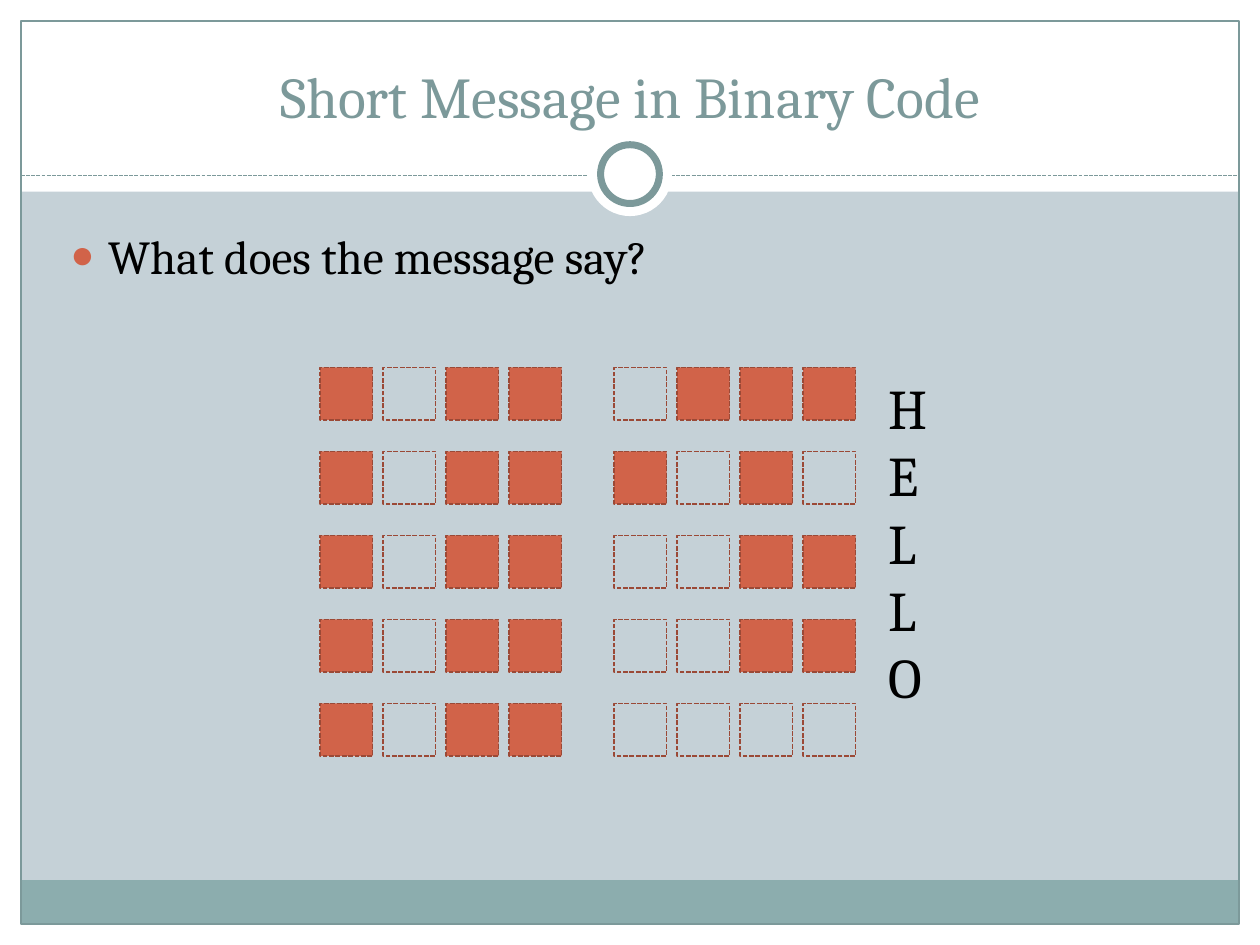
"""Build a slide that spells a short message in rows of binary squares."""
from lxml import etree
from pptx import Presentation
from pptx.dml.color import RGBColor
from pptx.enum import dml, shapes, text
from pptx.oxml import ns
from pptx.util import Pt

WHITE, SLATE, TEAL = "FFFFFF", "7C999A", "8CADAE"
ORANGE, RUST, BLACK = "D16349", "9B4936", "000000"
RECT, OVAL = shapes.MSO_SHAPE.RECTANGLE, shapes.MSO_SHAPE.OVAL


def colour(target, value):
    if hasattr(target, "solid"):
        target.solid()
        target = target.fore_color
    target.rgb = RGBColor.from_string(value)


def add_box(parent, kind, bounds, fill=None, line=None, width=0.75):
    box = parent.add_shape(kind, *map(Pt, bounds))
    box.shadow.inherit = False
    if fill:
        colour(box.fill, fill)
    else:
        box.fill.background()
    if line:
        colour(box.line.fill, line)
        box.line.width = Pt(width)
    else:
        box.line.fill.background()
    return box


deck = Presentation()
deck.slide_width, deck.slide_height = Pt(720), Pt(540)
page = deck.slides.add_slide(deck.slide_layouts[1])
colour(page.background.fill, "C5D1D7")

for bounds in [(0, 528, 720, 12), (0, 0, 720, 109.5), (0, 0, 12, 540), (708, 0, 12, 540)]:
    add_box(page.shapes, RECT, bounds, WHITE)
add_box(page.shapes, RECT, (12, 503, 696, 25), TEAL)
add_box(page.shapes, RECT, (12, 12, 696, 516), line=SLATE)

divider = page.shapes.add_connector(shapes.MSO_CONNECTOR.STRAIGHT, Pt(12), Pt(100.5), Pt(708), Pt(100.5))
colour(divider.line.fill, SLATE)
divider.line.width = Pt(0.75)
divider.line.dash_style = dml.MSO_LINE.SQUARE_DOT
etree.SubElement(divider.element.spPr, ns.qn("a:effectLst"))

add_box(page.shapes, OVAL, (336, 75.5, 48, 48), WHITE)
add_box(page.shapes, OVAL, (343.2, 82.7, 33.6, 33.6), WHITE, SLATE, 4)

title, body = page.shapes.title, page.placeholders[1]
letters = page.shapes.add_textbox(Pt(500.5), Pt(210), Pt(57.6), Pt(222))
labels = [
    (title, (24, 18, 672, 60), "Short Message in Binary Code", 33, SLATE),
    (body, (33, 126, 648, 60), "What does the message say?", 27, BLACK),
    (letters, (500.5, 210, 57.6, 222), "HELLO", 32, BLACK),
]
for box, bounds, words, size, shade in labels:
    box.left, box.top, box.width, box.height = map(Pt, bounds)
    box.element.getparent().append(box.element)
    frame = box.text_frame
    frame.word_wrap = True
    frame.auto_size = text.MSO_AUTO_SIZE.NONE
    span = frame.paragraphs[0].add_run()
    span.text = words
    span.font.name, span.font.size = "Cambria", Pt(size)
    colour(span.font.color, shade)

title.text_frame.vertical_anchor = text.MSO_ANCHOR.BOTTOM
title.text_frame.paragraphs[0].alignment = text.PP_ALIGN.CENTER
letters.text_frame.auto_size = text.MSO_AUTO_SIZE.SHAPE_TO_FIT_TEXT
letters.element.find(".//" + ns.qn("a:bodyPr")).set("vert", "wordArtVert")

para = body.text_frame.paragraphs[0]
para.space_before = Pt(5.4)
bullet = para._p.get_or_add_pPr()
bullet.set("marL", str(Pt(21.6)))
bullet.set("indent", str(Pt(-21.6)))
bullet_colour = etree.SubElement(bullet, ns.qn("a:buClr"))
etree.SubElement(bullet_colour, ns.qn("a:srgbClr"), val=ORANGE)
etree.SubElement(bullet, ns.qn("a:buSzPct"), val="85000")
etree.SubElement(bullet, ns.qn("a:buChar"), char="●")

grid = page.shapes.add_group_shape()
for row, code in enumerate(["10110111", "10111010", "10110011", "10110011", "10110000"]):
    for column, bit in enumerate(code):
        left = 183 + 36 * column + 24 * (column // 4)
        fill = ORANGE if bit == "1" else None
        square = add_box(grid.shapes, RECT, (left, 210 + 48 * row, 30, 30), fill, RUST, 0.9)
        square.line.dash_style = dml.MSO_LINE.SQUARE_DOT

deck.save("out.pptx")
